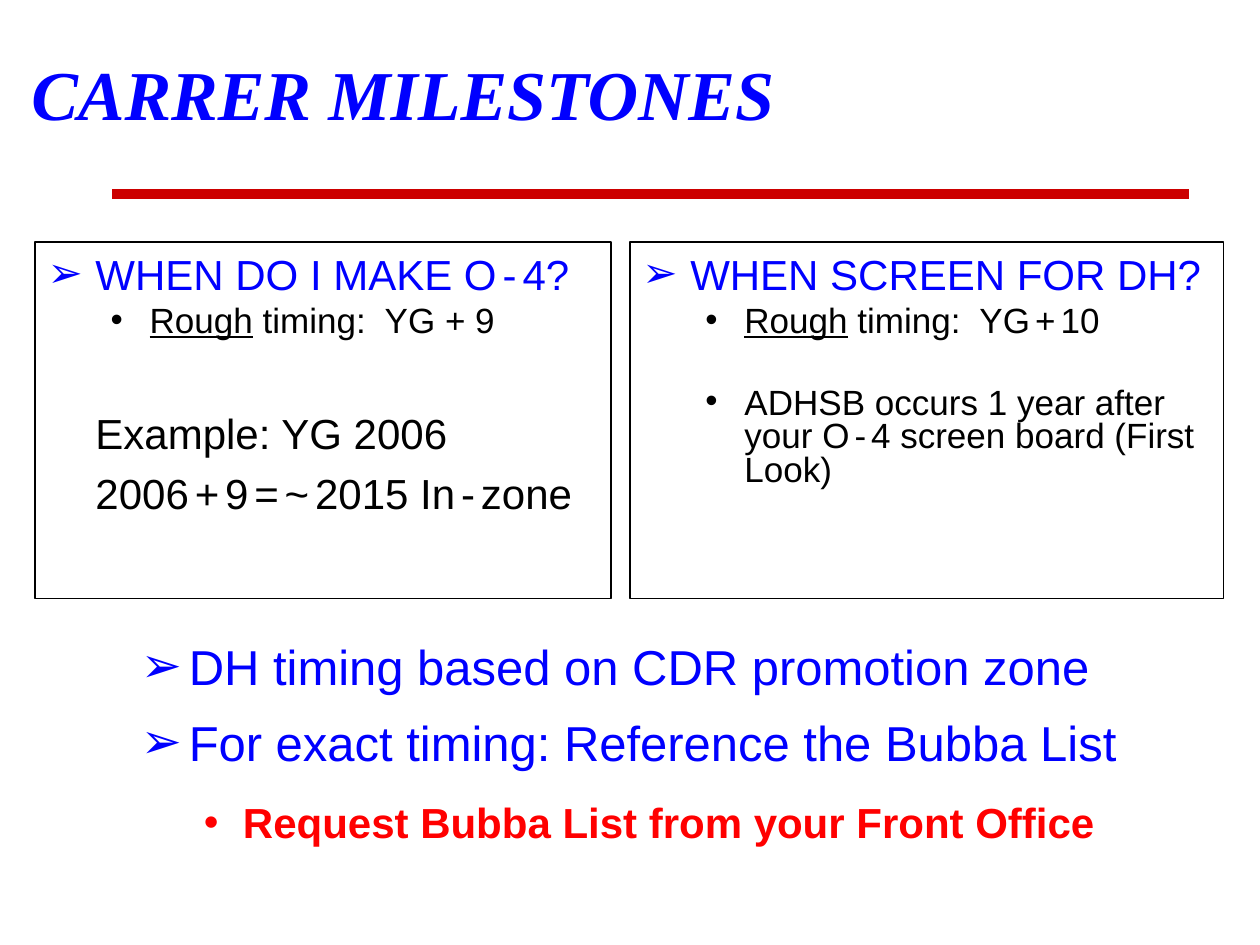
from lxml import etree
from pptx import Presentation
from pptx.dml.color import RGBColor
from pptx.enum.shapes import MSO_CONNECTOR
from pptx.enum.text import MSO_ANCHOR
from pptx.oxml.ns import qn
from pptx.util import Inches, Pt

STRAIGHT = MSO_CONNECTOR.STRAIGHT
TOP, MIDDLE = MSO_ANCHOR.TOP, MSO_ANCHOR.MIDDLE
BLUE = RGBColor(0x00, 0x00, 0xFF)
BLACK = RGBColor(0x00, 0x00, 0x00)
RED = RGBColor(0xFF, 0x00, 0x00)
RULE_RED = RGBColor(0xCC, 0x00, 0x00)
ARROW, DOT = "➢", "•"


class MilestoneSlide:
    """Holds the text style and the slide, and draws each kind of element."""

    body_font = "Arial"
    title_font = "Times New Roman"

    def __init__(self, slide):
        self.slide = slide

    def rule(self, left, right, y, color, width):
        line = self.slide.shapes.add_connector(
            STRAIGHT, Inches(left), Inches(y), Inches(right), Inches(y))
        line.line.color.rgb = color
        line.line.width = Pt(width)
        etree.SubElement(line._element.spPr, qn("a:effectLst"))

    def frame(self, left, top, width, height, anchor=TOP, outlined=False):
        box = self.slide.shapes.add_textbox(
            Inches(left), Inches(top), Inches(width), Inches(height))
        if outlined:
            box.line.color.rgb = BLACK
            box.line.width = Pt(1)
        box.text_frame.word_wrap = True
        box.text_frame.vertical_anchor = anchor
        return box.text_frame

    def title(self, text, *place):
        paragraph = self.frame(*place, anchor=MIDDLE).paragraphs[0]
        paragraph.add_run().text = text
        self.set_font(paragraph, self.title_font, 40, BLUE, True)
        paragraph.font.italic = True

    def set_font(self, paragraph, name, size, color, bold):
        font = paragraph.font
        font.name, font.size, font.bold = name, Pt(size), bold
        font.color.rgb = color

    def bullet(self, properties, char, color):
        if not char:
            etree.SubElement(properties, qn("a:buNone"))
            return
        tint = etree.SubElement(properties, qn("a:buClr"))
        etree.SubElement(tint, qn("a:srgbClr"), val=str(color))
        etree.SubElement(properties, qn("a:buFont"), typeface=self.body_font)
        etree.SubElement(properties, qn("a:buChar"), char=char)

    def item(self, frame, text, size, color, char=ARROW, before=0,
             underlined="", bold=False):
        """Add one paragraph; each | in the text is a half-size space."""
        first = frame.paragraphs[0]
        paragraph = frame.add_paragraph() if first.runs else first
        nested = char == DOT
        margin, hang = (0.81, 0.31) if nested else (0.38, 0.38)
        properties = paragraph._p.get_or_add_pPr()
        properties.set("marL", str(Inches(margin)))
        properties.set("indent", str(-Inches(hang) if char else 0))
        self.bullet(properties, char, color)
        if nested:
            paragraph.level = 1
            paragraph.line_spacing = 0.8
        paragraph.space_before = Pt(before)
        self.set_font(paragraph, self.body_font, size, color, bold)
        if underlined:
            lead = paragraph.add_run()
            lead.text = underlined
            lead.font.underline = True
        for index, part in enumerate(text.split("|")):
            if index:
                gap = paragraph.add_run()
                gap.text = " "
                gap.font.size = Pt(size / 2)
            paragraph.add_run().text = part


def main():
    deck = Presentation()
    deck.slide_width, deck.slide_height = Inches(10), Inches(7.5)
    page = MilestoneSlide(deck.slides.add_slide(deck.slide_layouts[6]))

    page.rule(0.89, 9.44, 1.54, RULE_RED, 6)
    page.title("CARRER MILESTONES", 0.15, 0.35, 8.42, 0.77)

    promotion = page.frame(0.28, 1.92, 4.57, 2.83, outlined=True)
    page.item(promotion, "WHEN DO I MAKE O|-|4?", 24, BLUE)
    page.item(promotion, " timing:  YG + 9", 20, BLACK, DOT, 4.5, "Rough")
    page.item(promotion, "Example: YG 2006", 24, BLACK, None, 38.5)
    page.item(promotion, "2006|+|9|=|~|2015 In|-|zone", 24, BLACK, None, 5.5)

    screening = page.frame(5, 1.92, 4.71, 2.83, outlined=True)
    page.item(screening, "WHEN SCREEN FOR DH?", 24, BLUE)
    page.item(screening, " timing:  YG|+|10", 20, BLACK, DOT, 4.5, "Rough")
    page.item(screening,
              "ADHSB occurs 1 year after your O|-|4 screen board (First Look)",
              20, BLACK, DOT, 27.5)

    guidance = page.frame(1.02, 5, 7.98, 1.08)
    page.item(guidance, "DH timing based on CDR promotion zone", 28, BLUE)
    page.item(guidance, "For exact timing: Reference the Bubba List", 28, BLUE,
              before=10)
    page.item(guidance, "Request Bubba List from your Front Office", 24, RED,
              DOT, 20, bold=True)

    deck.save("out.pptx")


if __name__ == "__main__":
    main()
